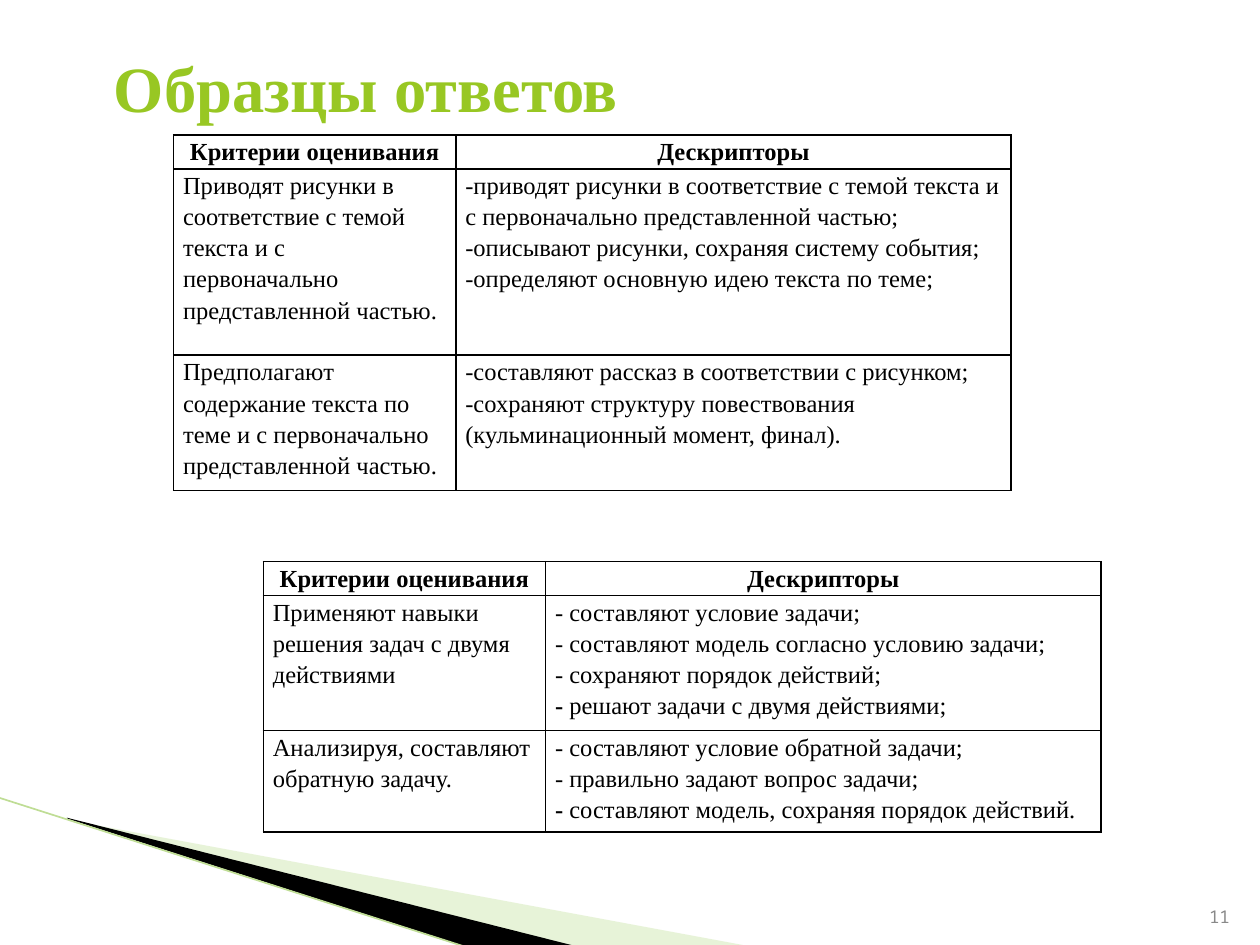
from lxml import etree
from pptx import Presentation
from pptx import util as u
from pptx.dml.color import RGBColor
from pptx.enum import shapes, text
from pptx.oxml.ns import qn

BLACK = RGBColor(0x00, 0x00, 0x00)
GREEN = RGBColor(0x98, 0xC7, 0x23)
PALE_GREEN = RGBColor(0xC5, 0xE1, 0x9F)
LINE_GREEN = RGBColor(0xBF, 0xDD, 0x95)
GRAY = RGBColor(0x89, 0x89, 0x89)
SERIF = "Times New Roman"
MONO = "Noto Sans Mono"

COLUMN_WIDTHS = (161.3, 317.3)
HEADER = (["Критерии оценивания"], ["Дескрипторы"])
# Each row: paragraphs of the left cell, paragraphs of the right cell.
# A paragraph given as a tuple starts with a bold part.
STORY_ROWS = [
    HEADER,
    (["Приводят рисунки в соответствие с темой текста и с "
      "первоначально представленной частью."],
     ["-приводят рисунки в соответствие с темой текста и с "
      "первоначально представленной частью;",
      "-описывают рисунки, сохраняя систему события;",
      "-определяют основную идею текста по теме;"]),
    (["Предполагают содержание текста по теме и с первоначально "
      "представленной частью."],
     ["-составляют рассказ в соответствии с рисунком;",
      "-сохраняют структуру повествования (кульминационный момент, финал)."]),
]
PROBLEM_ROWS = [
    HEADER,
    (["Применяют навыки решения задач с двумя действиями"],
     ["- составляют условие задачи;",
      "- составляют модель согласно условию задачи;",
      "- сохраняют порядок действий;",
      ("-", " решают задачи с двумя действиями;")]),
    (["Анализируя, составляют обратную задачу."],
     ["- составляют условие обратной задачи;",
      "- правильно задают вопрос задачи;",
      ("-", " составляют модель, сохраняя порядок действий.")]),
]


def add_run(paragraph, words, size, color, font=SERIF, bold=False):
    run = paragraph.add_run()
    run.text = words
    run.font.size = u.Pt(size)
    run.font.name = font
    run.font.bold = bold
    run.font.color.rgb = color


def add_label(slide, words, box, anchor, align, **style):
    shape = slide.shapes.add_textbox(*map(u.Pt, box))
    frame = shape.text_frame
    frame.word_wrap = True
    frame.vertical_anchor = anchor
    paragraph = frame.paragraphs[0]
    paragraph.alignment = align
    add_run(paragraph, words, **style)


def add_wedge(slide, points, color, opacity=100):
    corners = [(u.Pt(x), u.Pt(y)) for x, y in points]
    builder = slide.shapes.build_freeform(*corners[0], scale=1.0)
    builder.add_line_segments(corners[1:], close=True)
    shape = builder.convert_to_shape()
    shape.shadow.inherit = False
    shape.fill.solid()
    shape.fill.fore_color.rgb = color
    shape.line.fill.background()
    if opacity < 100:
        fill_color = shape._element.spPr.find(".//" + qn("a:srgbClr"))
        etree.SubElement(fill_color, qn("a:alpha"), val=str(opacity * 1000))


def add_line(slide, start, end, color, width):
    line = slide.shapes.add_connector(
        shapes.MSO_CONNECTOR.STRAIGHT, *map(u.Pt, start + end))
    line.line.color.rgb = color
    line.line.width = u.Pt(width)
    etree.SubElement(line._element.spPr, qn("a:effectLst"))


def add_borders(cell):
    properties = cell._tc.get_or_add_tcPr()
    for index, side in enumerate(("a:lnL", "a:lnR", "a:lnT", "a:lnB")):
        border = etree.Element(qn(side), w=str(u.Pt(1)))
        fill = etree.SubElement(border, qn("a:solidFill"))
        etree.SubElement(fill, qn("a:srgbClr"), val=str(BLACK))
        properties.insert(index, border)


def fill_cell(cell, paragraphs, is_header):
    cell.fill.background()
    add_borders(cell)
    cell.margin_left = cell.margin_right = u.Pt(5.4)
    cell.margin_top = cell.margin_bottom = 0
    frame = cell.text_frame
    for index, content in enumerate(paragraphs):
        paragraph = frame.add_paragraph() if index else frame.paragraphs[0]
        paragraph.line_spacing = 1.15
        if is_header:
            paragraph.alignment = text.PP_ALIGN.CENTER
        lead, rest = content if isinstance(content, tuple) else ("", content)
        if lead:
            add_run(paragraph, lead, 14, BLACK, bold=True)
        add_run(paragraph, rest, 14, BLACK, bold=is_header)


def add_criteria_table(slide, left, top, rows, heights):
    frame = slide.shapes.add_table(
        len(rows), len(COLUMN_WIDTHS), u.Pt(left), u.Pt(top),
        u.Pt(sum(COLUMN_WIDTHS)), u.Pt(sum(heights)))
    table = frame.table
    table.horz_banding = False
    for column, width in zip(table.columns, COLUMN_WIDTHS):
        column.width = u.Pt(width)
    for row_index, (row, height) in enumerate(zip(rows, heights)):
        table.rows[row_index].height = u.Pt(height)
        for column_index, paragraphs in enumerate(row):
            fill_cell(table.cell(row_index, column_index), paragraphs,
                      is_header=row_index == 0)


def main():
    presentation = Presentation()
    presentation.slide_width = u.Pt(720)
    presentation.slide_height = u.Pt(540)
    slide = presentation.slides.add_slide(presentation.slide_layouts[6])

    # Corner decoration
    add_wedge(slide, [(39.6, 468.7), (428.4, 540.7), (328.3, 540.7),
                      (39.6, 468)], PALE_GREEN, opacity=40)
    add_wedge(slide, [(38.2, 467.3), (329, 540.7), (267.8, 541.4),
                      (38.9, 468)], BLACK)
    add_line(slide, (-0.7, 455.8), (267.1, 541.4), LINE_GREEN, 0.95)

    # Slide number
    add_label(slide, "11", (681.1, 504.7, 28.8, 28.8),
              text.MSO_ANCHOR.BOTTOM, text.PP_ALIGN.RIGHT,
              size=10, color=GRAY, font=MONO)

    # Title and the two criteria tables
    add_criteria_table(slide, 99.2, 77.1, STORY_ROWS, (17.8, 106.5, 71))
    add_label(slide, "Образцы ответов", (36, 21.6, 346.3, 55.4),
              text.MSO_ANCHOR.MIDDLE, text.PP_ALIGN.CENTER,
              size=36.9, color=GREEN, bold=True)
    add_criteria_table(slide, 150.5, 320.9, PROBLEM_ROWS, (17.8, 71, 53.2))

    presentation.save("out.pptx")


if __name__ == "__main__":
    main()
